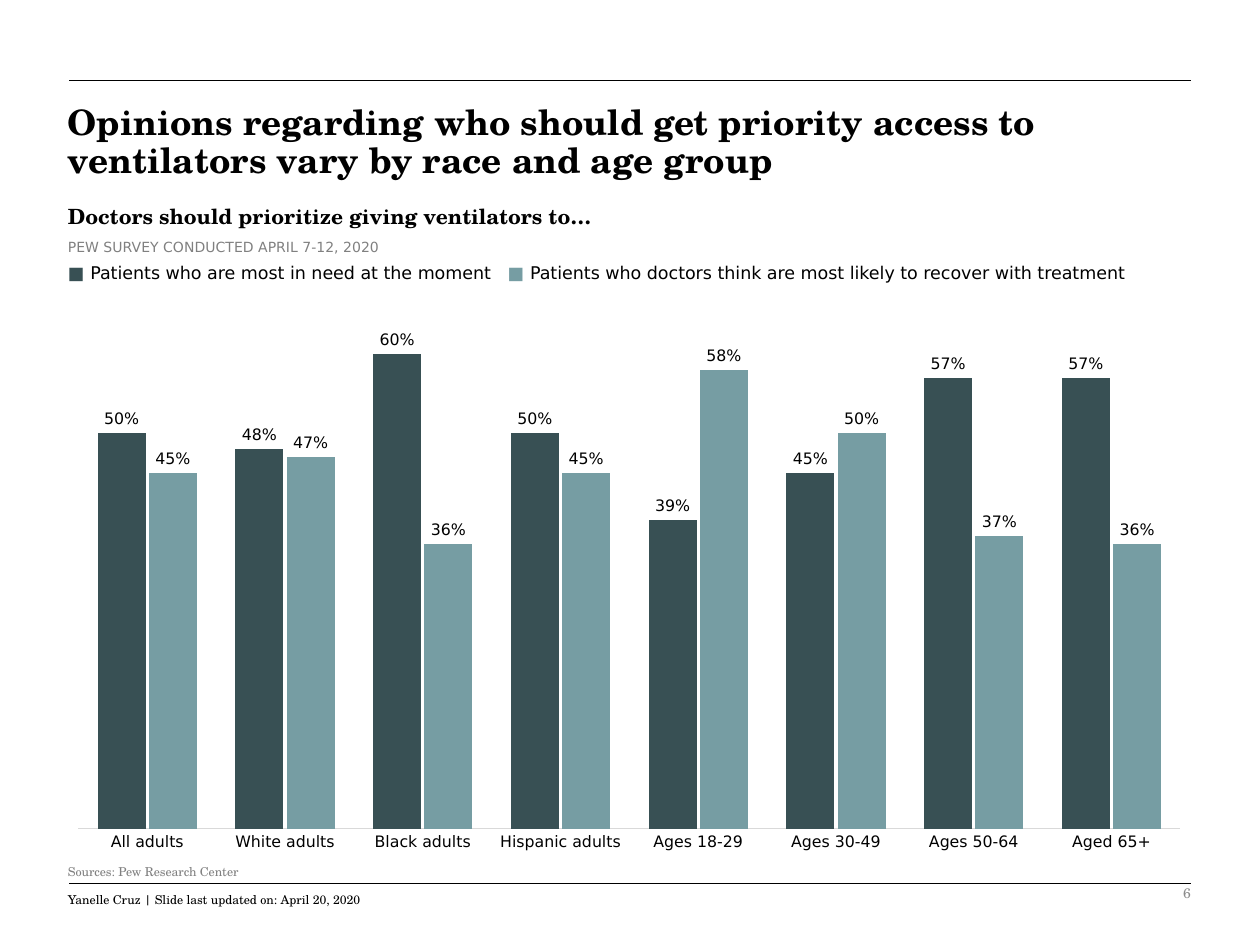
from dataclasses import dataclass

from lxml.etree import SubElement
from pptx import Presentation
from pptx.chart.data import CategoryChartData as ChartData
from pptx.dml.color import RGBColor as Rgb
from pptx.enum.chart import XL_CHART_TYPE as ChartType
from pptx.enum.chart import XL_LABEL_POSITION as LabelPosition
from pptx.enum.chart import XL_TICK_MARK as TickMark
from pptx.enum.shapes import MSO_CONNECTOR as Connector
from pptx.enum.text import MSO_ANCHOR as Anchor
from pptx.enum.text import PP_ALIGN as Align
from pptx.oxml.ns import qn
from pptx.util import Inches, Pt


@dataclass(frozen=True)
class Theme:
    serif: str = "TeX Gyre Schola"
    sans: str = "DejaVu Sans"
    black: str = "000000"
    gray: str = "808080"
    page_gray: str = "8C8C8C"
    axis_gray: str = "D9D9D9"
    need: str = "385054"
    recover: str = "769DA3"
    title: int = 20
    heading: int = 12
    legend: int = 10
    label: int = 9
    small: int = 8
    note: int = 7


THEME = Theme()


@dataclass(frozen=True)
class Span:
    text: str
    size: int
    font: str = THEME.serif
    color: str = THEME.black
    bold: bool = False


@dataclass(frozen=True)
class TextBlock:
    left: float
    top: float
    width: float
    height: float
    spans: tuple[Span, ...]
    spacing: float = 1.0
    align: Align = Align.LEFT
    anchor: Anchor = Anchor.TOP
    wrap: bool = True
    tab: float | None = None


@dataclass(frozen=True)
class Series:
    name: str
    color: str
    values: tuple[float, ...]


GROUPS = ("All adults", "White adults", "Black adults", "Hispanic adults",
          "Ages 18-29", "Ages 30-49", "Ages 50-64", "Aged 65+")
SERIES = (
    Series("Patients who are most in need at the moment", THEME.need,
           (0.5, 0.48, 0.6, 0.5, 0.39, 0.45, 0.57, 0.57)),
    Series("Patients who doctors think are most likely to recover with treatment",
           THEME.recover, (0.45, 0.47, 0.36, 0.45, 0.58, 0.5, 0.37, 0.36)),
)
LEFT = 0.44
RULE_ENDS = (0.55, 9.45)
RULE_TOPS = (0.64, 7.01)


def legend_spans() -> tuple[Span, ...]:
    spans = []
    for index, series in enumerate(SERIES):
        marker = "\t■ " if index else "■ "
        spans.append(Span(marker, THEME.legend, THEME.sans, series.color, True))
        spans.append(Span(series.name, THEME.legend, THEME.sans))
    return tuple(spans)


BLOCKS = (
    TextBlock(LEFT, 0.79, 9.2, 0.7, (Span(
        "Opinions regarding who should get priority access to "
        "ventilators vary by race and age group", THEME.title, bold=True),), 0.9),
    TextBlock(LEFT, 1.57, 6.17, 0.3, (Span(
        "Doctors should prioritize giving ventilators to…", THEME.heading, bold=True),)),
    TextBlock(LEFT, 1.84, 3.01, 0.24, (Span(
        "PEW SURVEY CONDUCTED APRIL 7-12, 2020", THEME.small, THEME.sans, THEME.gray),)),
    TextBlock(LEFT, 2.03, 9.2, 0.27, legend_spans(), wrap=False, tab=3.49),
    TextBlock(LEFT, 6.8, 4.75, 0.2, (Span(
        "Sources: Pew Research Center", THEME.note, color=THEME.gray),), 1.1),
    TextBlock(LEFT, 7.02, 3.33, 0.23, (Span(
        "Yanelle Cruz | Slide last updated on: April 20, 2020", THEME.note),), 1.1),
    TextBlock(7.06, 6.89, 2.49, 0.4, (Span("6", THEME.small, color=THEME.page_gray),),
              align=Align.RIGHT, anchor=Anchor.MIDDLE),
)


def set_font(font, size: int, name: str, color: str, bold: bool = False) -> None:
    for key, value in {"size": Pt(size), "name": name, "bold": bold}.items():
        setattr(font, key, value)
    font.color.rgb = Rgb.from_string(color)


def add_text(page, block: TextBlock) -> None:
    box = page.shapes.add_textbox(Inches(block.left), Inches(block.top),
                                  Inches(block.width), Inches(block.height))
    frame = box.text_frame
    frame.word_wrap = block.wrap
    frame.vertical_anchor = block.anchor
    para = frame.paragraphs[0]
    for key, value in {"alignment": block.align, "line_spacing": block.spacing}.items():
        setattr(para, key, value)
    if block.tab is not None:
        stops = SubElement(para._p.get_or_add_pPr(), qn("a:tabLst"))
        SubElement(stops, qn("a:tab"), pos=str(Inches(block.tab)), algn="l")
    for span in block.spans:
        run = para.add_run()
        run.text = span.text
        set_font(run.font, span.size, span.font, span.color, span.bold)


def add_rule(page, top: float) -> None:
    start, end = RULE_ENDS
    rule = page.shapes.add_connector(Connector.STRAIGHT, Inches(start), Inches(top),
                                     Inches(end), Inches(top))
    rule.line.width = Pt(0.5)
    rule.line.color.rgb = Rgb.from_string(THEME.black)
    SubElement(rule._element.spPr, qn("a:effectLst"))


def add_opinion_chart(page) -> None:
    data = ChartData(number_format="0%")
    data.categories = GROUPS
    for series in SERIES:
        data.add_series(series.name, series.values)
    chart = page.shapes.add_chart(ChartType.COLUMN_CLUSTERED, Inches(LEFT), Inches(2.41),
                                  Inches(9.11), Inches(4.44), data).chart
    chart.has_legend = False
    chart.has_title = False
    set_font(chart.font, THEME.legend, THEME.serif, THEME.black)

    values = chart.value_axis
    for key, value in {"minimum_scale": 0, "maximum_scale": 0.65,
                       "has_major_gridlines": False, "visible": False}.items():
        setattr(values, key, value)
    groups = chart.category_axis
    groups.major_tick_mark = groups.minor_tick_mark = TickMark.NONE
    groups.format.line.width = Pt(0.75)
    groups.format.line.color.rgb = Rgb.from_string(THEME.axis_gray)
    set_font(groups.tick_labels.font, THEME.label, THEME.sans, THEME.black)

    plot = chart.plots[0]
    for key, value in {"gap_width": 80, "overlap": -7, "vary_by_categories": False}.items():
        setattr(plot, key, value)
    for bars, series in zip(plot.series, SERIES):
        bars.format.fill.solid()
        bars.format.fill.fore_color.rgb = Rgb.from_string(series.color)
        labels = bars.data_labels
        for key, value in {"show_value": True, "position": LabelPosition.OUTSIDE_END,
                           "number_format": "0%", "number_format_is_linked": False}.items():
            setattr(labels, key, value)
        set_font(labels.font, THEME.label, THEME.sans, THEME.black)


def main() -> None:
    deck = Presentation()
    deck.slide_width, deck.slide_height = Inches(10), Inches(7.5)
    page = deck.slides.add_slide(deck.slide_layouts[6])
    for top in RULE_TOPS:
        add_rule(page, top)
    add_opinion_chart(page)
    for block in BLOCKS:
        add_text(page, block)
    deck.save("out.pptx")


if __name__ == "__main__":
    main()
